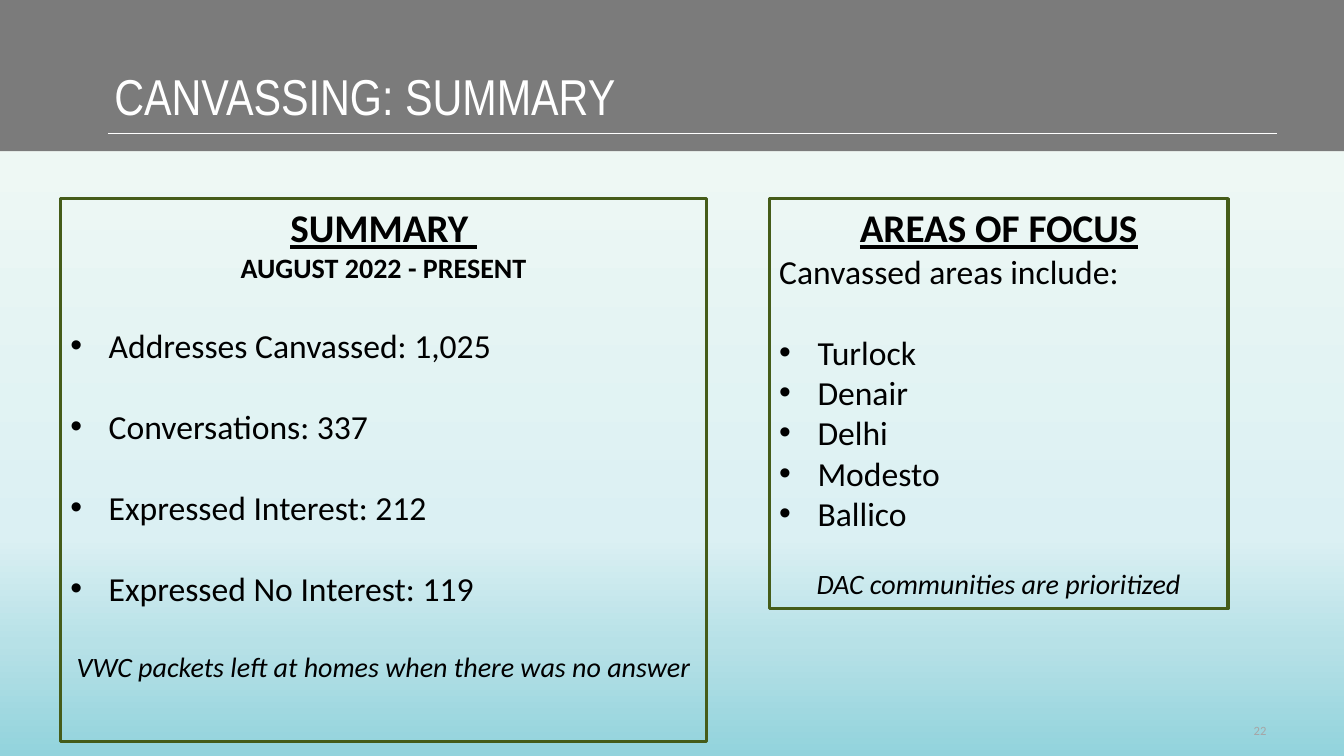
from dataclasses import dataclass

from lxml.etree import SubElement
from pptx import Presentation
from pptx.dml.color import RGBColor
from pptx.enum.dml import MSO_LINE
from pptx.enum.shapes import MSO_CONNECTOR, MSO_SHAPE
from pptx.enum.text import MSO_ANCHOR, MSO_AUTO_SIZE, PP_ALIGN
from pptx.oxml.ns import qn
from pptx.shapes.autoshape import Shape
from pptx.slide import Slide
from pptx.text.text import TextFrame
from pptx.util import Inches, Pt


@dataclass(frozen=True)
class Theme:
    heading_font: str = "Arial Narrow"
    body_font: str = "Calibri"
    band: str = "7B7B7B"
    white: str = "FFFFFF"
    border: str = "455C19"
    ink: str = "000000"
    muted: str = "A6A6A6"
    backdrop: tuple = ((0, "F6FBF4"), (71, "DBF0F3"), (85, "B7E1E7"), (100, "92D3DC"))
    title_size: int = 36
    heading_size: int = 28
    body_size: int = 24
    small_size: int = 20
    number_size: int = 9


THEME = Theme()
HEADING = {"size": Pt(THEME.heading_size), "bold": True, "underline": True}
SUBHEADING = {"size": Pt(THEME.small_size), "bold": True}
BODY = {"size": Pt(THEME.body_size)}
NOTE = {"size": Pt(THEME.small_size), "italic": True}


@dataclass(frozen=True)
class Line:
    text: str
    style: dict
    centred: bool = False
    bullet: bool = False
    gap: float = 0  # points above the line


@dataclass(frozen=True)
class Panel:
    left: float
    width: float
    height: float
    lines: list[Line]


PANEL_TOP = 1.97
BULLET_INDENT = Inches(0.38)

RESULTS = ["Addresses Canvassed: 1,025", "Conversations: 337",
           "Expressed Interest: 212", "Expressed No Interest: 119"]
AREAS = ["Turlock", "Denair", "Delhi", "Modesto", "Ballico"]

PANELS = [
    Panel(0.6, 6.41, 5.39, [
        Line("SUMMARY ", HEADING, centred=True),
        Line("AUGUST 2022 - PRESENT", SUBHEADING, centred=True),
        *[Line(text, BODY, bullet=True, gap=29) for text in RESULTS],
        Line("VWC packets left at homes when there was no answer", NOTE, centred=True, gap=30),
    ]),
    Panel(7.63, 4.55, 4.07, [
        Line("AREAS OF FOCUS", HEADING, centred=True),
        Line("Canvassed areas include:", BODY),
        *[Line(text, BODY, bullet=True, gap=0 if index else 29)
          for index, text in enumerate(AREAS)],
        Line("DAC communities are prioritized", NOTE, centred=True, gap=24),
    ]),
]


def set_format(target: object, values: dict) -> None:
    for name, value in values.items():
        setattr(target, name, value)


def write_line(frame: TextFrame, line: Line, first: bool, font: str, color: str):
    para = frame.paragraphs[0] if first else frame.add_paragraph()
    set_format(para, {
        "alignment": PP_ALIGN.CENTER if line.centred else PP_ALIGN.LEFT,
        "space_before": Pt(line.gap),
        "space_after": Pt(0),
    })
    if line.bullet:
        properties = para._p.get_or_add_pPr()
        properties.set("marL", str(BULLET_INDENT))
        properties.set("indent", str(-BULLET_INDENT))
        SubElement(properties, qn("a:buFont"), typeface="Arial")
        SubElement(properties, qn("a:buChar"), char="•")
    span = para.add_run()
    span.text = line.text
    set_format(span.font, {"name": font, **line.style})
    span.font.color.rgb = RGBColor.from_string(color)
    return para


def draw_backdrop(slide: Slide) -> None:
    fill = slide.background.fill
    fill.gradient()
    fill.gradient_angle = 270
    stops = next(slide._element.iter(qn("a:gsLst")))
    stops.clear()
    for percent, color in THEME.backdrop:
        stop = SubElement(stops, qn("a:gs"), pos=str(percent * 1000))
        SubElement(stop, qn("a:srgbClr"), val=color)


def draw_header(slide: Slide, title: Shape) -> None:
    # Grey band and thin rule, both behind the title
    band = slide.shapes.add_shape(MSO_SHAPE.RECTANGLE, 0, 0, Inches(13.33), Inches(1.5))
    band.shadow.inherit = False
    band.fill.solid()
    band.fill.fore_color.rgb = RGBColor.from_string(THEME.band)
    band.line.fill.background()
    rule = slide.shapes.add_connector(
        MSO_CONNECTOR.STRAIGHT, Inches(1.07), Inches(1.32), Inches(12.67), Inches(1.32))
    rule.line.color.rgb = RGBColor.from_string(THEME.white)
    rule.line.width = Pt(0.75)
    SubElement(rule._element.spPr, qn("a:effectLst"))
    for part in (band, rule):
        title._element.addprevious(part._element)

    # Title
    set_format(title, {"left": Inches(0.92), "top": Inches(0.61),
                       "width": Inches(11.5), "height": Inches(0.73)})
    set_format(title.text_frame, {"vertical_anchor": MSO_ANCHOR.MIDDLE,
                                  "auto_size": MSO_AUTO_SIZE.NONE, "word_wrap": True})
    line = Line(" CANVASSING: SUMMARY", {"size": Pt(THEME.title_size)})
    para = write_line(title.text_frame, line, True, THEME.heading_font, THEME.white)
    para.line_spacing = 0.95


def draw_panel(slide: Slide, panel: Panel) -> None:
    box = slide.shapes.add_shape(
        MSO_SHAPE.RECTANGLE, Inches(panel.left), Inches(PANEL_TOP),
        Inches(panel.width), Inches(panel.height))
    box.shadow.inherit = False
    box.fill.background()
    box.line.color.rgb = RGBColor.from_string(THEME.border)
    set_format(box.line, {"width": Pt(2.25), "dash_style": MSO_LINE.SOLID})
    set_format(box.text_frame, {"vertical_anchor": MSO_ANCHOR.TOP, "word_wrap": True})
    for index, line in enumerate(panel.lines):
        write_line(box.text_frame, line, index == 0, THEME.body_font, THEME.ink)


def draw_slide_number(slide: Slide) -> None:
    box = slide.shapes.add_textbox(Inches(11.66), Inches(7.1), Inches(1), Inches(0.3))
    set_format(box.text_frame, {"vertical_anchor": MSO_ANCHOR.MIDDLE, "word_wrap": True})
    line = Line("22", {"size": Pt(THEME.number_size)})
    para = write_line(box.text_frame, line, True, THEME.body_font, THEME.muted)
    para.alignment = PP_ALIGN.RIGHT


def main() -> None:
    deck = Presentation()
    set_format(deck, {"slide_width": Inches(13.33), "slide_height": Inches(7.5)})
    slide = deck.slides.add_slide(deck.slide_layouts.get_by_name("Title Only"))
    draw_backdrop(slide)
    draw_header(slide, slide.shapes.title)
    for panel in PANELS:
        draw_panel(slide, panel)
    draw_slide_number(slide)
    deck.save("out.pptx")


if __name__ == "__main__":
    main()
